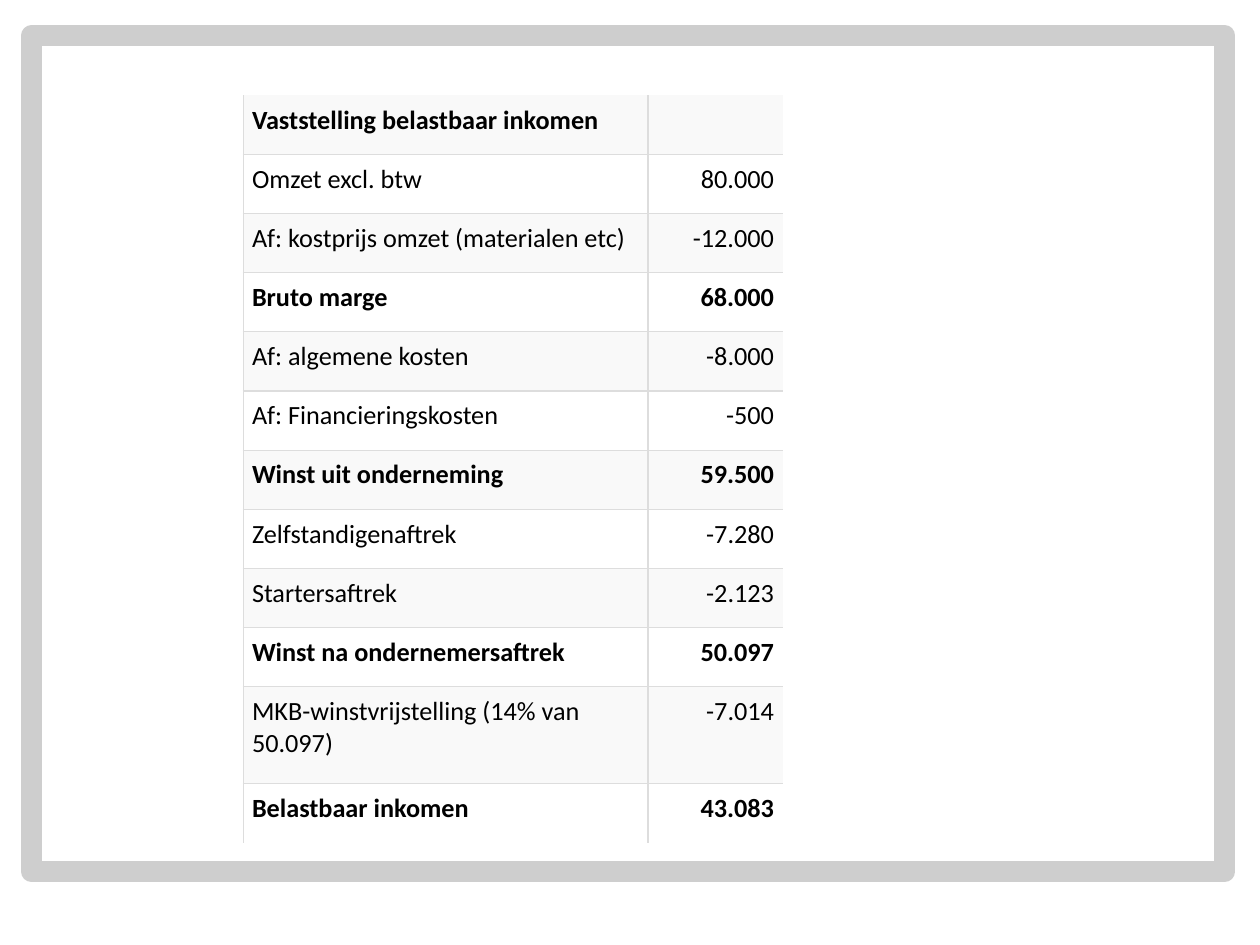
from lxml import etree
from pptx import Presentation
from pptx.dml.color import RGBColor
from pptx.enum.shapes import MSO_SHAPE
from pptx.enum.text import MSO_ANCHOR, PP_ALIGN
from pptx.oxml.ns import qn
from pptx.util import Pt

RECT = MSO_SHAPE.RECTANGLE
TOP = MSO_ANCHOR.TOP
LEFT, RIGHT = PP_ALIGN.LEFT, PP_ALIGN.RIGHT

COLORS = {"frame": "CECECE", "rule": "DDDDDD", "band": "F9F9F9",
          "plain": "FFFFFF", "text": "000000"}
FONT = "Calibri"

# label, amount, bold, shaded
ROWS = [
    ("Vaststelling belastbaar inkomen", "", True, True),
    ("Omzet excl. btw", "80.000", False, False),
    ("Af: kostprijs omzet (materialen etc)", "-12.000", False, True),
    ("Bruto marge", "68.000", True, False),
    ("Af: algemene kosten", "-8.000", False, True),
    ("Af: Financieringskosten", "-500", False, False),
    ("Winst uit onderneming", "59.500", True, True),
    ("Zelfstandigenaftrek", "-7.280", False, False),
    ("Startersaftrek", "-2.123", False, True),
    ("Winst na ondernemersaftrek", "50.097", True, False),
    ("MKB-winstvrijstelling (14% van 50.097)", "-7.014", False, True),
    ("Belastbaar inkomen", "43.083", True, False),
]
WIDTHS = (231.3, 77)
ROW_H, TALL_H, TALL_ROW = 33.8, 55.5, 10
INSET = 5


def rgb(name):
    return RGBColor.from_string(COLORS[name])


def add_frame(slide):
    frame = slide.shapes.add_shape(RECT, Pt(18), Pt(20.5), Pt(682), Pt(477.5))
    frame.shadow.inherit = False
    frame.fill.background()
    frame.line.color.rgb = rgb("frame")
    frame.line.width = Pt(12)
    etree.SubElement(frame.line._get_or_add_ln(), qn("a:round"))


def set_edges(cell, edges):
    """Rule the given sides (letters of LRTB) and clear the others."""
    props = cell._tc.get_or_add_tcPr()
    for side in "LRTB":
        line = etree.SubElement(props, qn(f"a:ln{side}"), w=str(Pt(0.75)))
        if side in edges:
            fill = etree.SubElement(line, qn("a:solidFill"))
            etree.SubElement(fill, qn("a:srgbClr"), val=COLORS["rule"])
        else:
            etree.SubElement(line, qn("a:noFill"))


def fill_cell(cell, text, align, bold, shade):
    cell.fill.solid()
    cell.fill.fore_color.rgb = rgb("band" if shade else "plain")
    cell.vertical_anchor = TOP
    cell.margin_left = cell.margin_right = Pt(INSET)
    cell.margin_top = cell.margin_bottom = Pt(INSET)
    if not text:
        return
    para = cell.text_frame.paragraphs[0]
    para.alignment = align
    run = para.add_run()
    run.text = text
    run.font.name = FONT
    run.font.size = Pt(15)
    run.font.bold = bold
    run.font.color.rgb = rgb("text")


def add_sums(slide):
    heights = [TALL_H if i == TALL_ROW else ROW_H for i in range(len(ROWS))]
    table = slide.shapes.add_table(
        len(ROWS), len(WIDTHS), Pt(139), Pt(54.5),
        Pt(sum(WIDTHS)), Pt(sum(heights))).table
    table.first_row = table.horz_banding = False
    for col, width in zip(table.columns, WIDTHS):
        col.width = Pt(width)
    last = len(ROWS) - 1
    for i, (label, amount, bold, shade) in enumerate(ROWS):
        table.rows[i].height = Pt(heights[i])
        across = ("T" if i else "") + ("B" if i < last else "")
        parts = ((label, LEFT, "LR"), (amount, RIGHT, "L"))
        for j, (text, align, sides) in enumerate(parts):
            cell = table.cell(i, j)
            set_edges(cell, sides + across)
            fill_cell(cell, text, align, bold, shade)


def main():
    deck = Presentation()
    deck.slide_width, deck.slide_height = Pt(720), Pt(540)
    slide = deck.slides.add_slide(deck.slide_layouts[6])
    add_frame(slide)
    add_sums(slide)
    deck.save("out.pptx")


if __name__ == "__main__":
    main()
